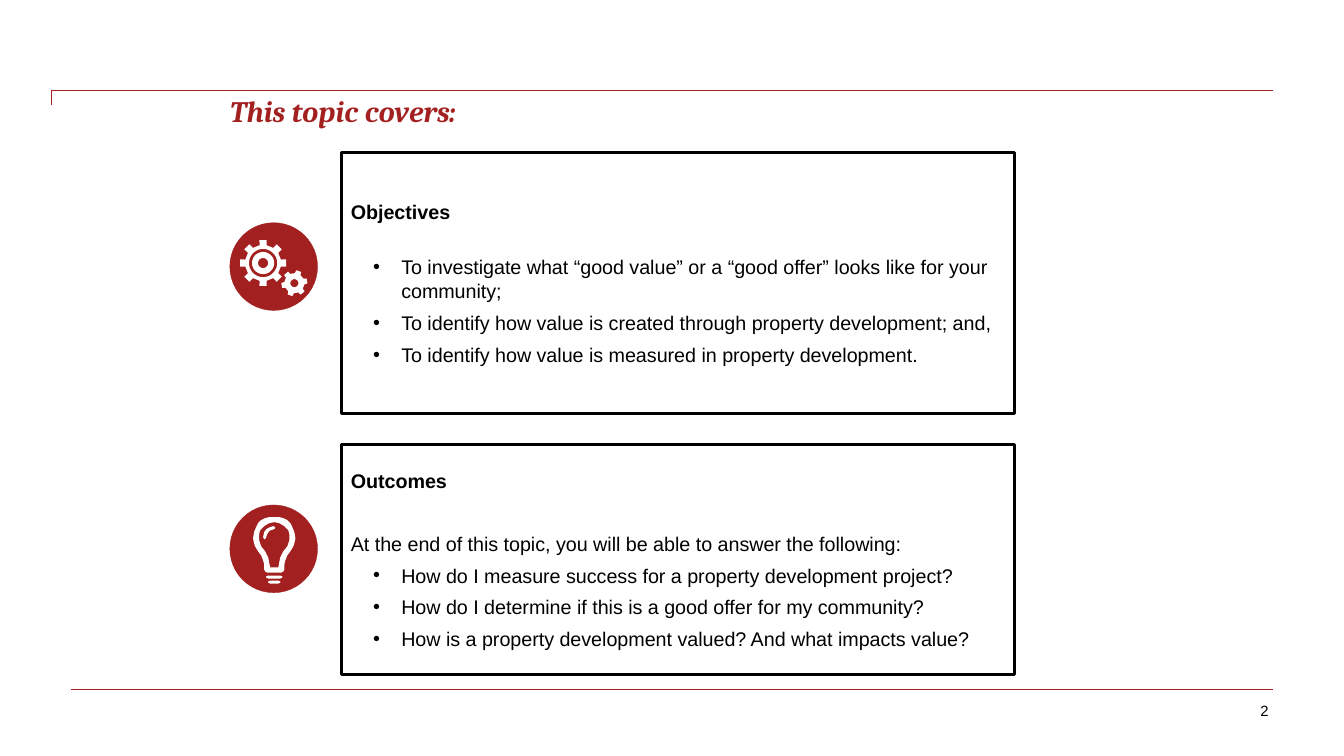
from dataclasses import dataclass
from math import cos, radians, sin

from lxml import etree
from pptx import Presentation
from pptx.dml.color import RGBColor
from pptx.enum.shapes import MSO_CONNECTOR, MSO_SHAPE
from pptx.enum.text import MSO_ANCHOR, MSO_AUTO_SIZE, PP_ALIGN
from pptx.oxml.ns import qn
from pptx.util import Inches, Pt

STRAIGHT, ELBOW = MSO_CONNECTOR.STRAIGHT, MSO_CONNECTOR.ELBOW
RECTANGLE, OVAL = MSO_SHAPE.RECTANGLE, MSO_SHAPE.OVAL
TOP, MIDDLE = MSO_ANCHOR.TOP, MSO_ANCHOR.MIDDLE
LEFT, RIGHT = PP_ALIGN.LEFT, PP_ALIGN.RIGHT
NO_AUTOFIT = MSO_AUTO_SIZE.NONE

Point = tuple[float, float]
Contour = list[Point]


@dataclass(frozen=True)
class Theme:
    red: RGBColor = RGBColor(0xA3, 0x20, 0x20)
    black: RGBColor = RGBColor(0, 0, 0)
    white: RGBColor = RGBColor(255, 255, 255)
    heading_font: str = "Cambria"
    body_font: str = "Arial"
    title_size: float = 21.2
    body_size: float = 14.1
    number_size: float = 10.6
    line_spacing: float = 1.03


@dataclass(frozen=True)
class Line:
    text: str
    bold: bool = False
    bullet: bool = False
    before: float = 5.3


@dataclass(frozen=True)
class Panel:
    top: float
    height: float
    lines: list[Line]


@dataclass(frozen=True)
class Icon:
    top: float
    drawings: list[list[Contour]]


THEME = Theme()
ICON_LEFT, ICON_SIZE = 2.28, 0.87
PANEL_LEFT, PANEL_WIDTH = 3.39, 6.67

PANELS = [
    Panel(1.51, 2.59, [
        Line("Objectives", bold=True, before=0),
        Line("To investigate what “good value” or a “good offer” looks like for your community;",
             bullet=True, before=22),
        Line("To identify how value is created through property development; and,", bullet=True),
        Line("To identify how value is measured in property development.", bullet=True),
    ]),
    Panel(4.41, 2.28, [
        Line("Outcomes", bold=True, before=0),
        Line("At the end of this topic, you will be able to answer the following:", before=27.3),
        Line("How do I measure success for a property development project?", bullet=True),
        Line("How do I determine if this is a good offer for my community?", bullet=True),
        Line("How is a property development valued? And what impacts value?", bullet=True),
    ]),
]


# Icon geometry, in inches on the slide
def polar(center: Point, radius: float, angle: float) -> Point:
    return (center[0] + radius * cos(radians(angle)),
            center[1] + radius * sin(radians(angle)))


def circle(center: Point, radius: float) -> Contour:
    return [polar(center, radius, angle) for angle in range(0, 360, 10)]


def gear(center: Point, teeth: int, outer: float, root: float,
         phase: float, tip: float, foot: float) -> Contour:
    profile = [(root, -foot), (outer, -tip), (outer, tip), (root, foot)]
    return [polar(center, radius, phase + 360 / teeth * tooth + offset)
            for tooth in range(teeth) for radius, offset in profile]


def mirrored(axis: float, half: Contour) -> Contour:
    """Close a right-hand profile of (offset, y) points with its reflection."""
    return ([(axis + dx, y) for dx, y in half]
            + [(axis - dx, y) for dx, y in reversed(half)])


def bulb_bar(half_width: float, top: float) -> Contour:
    return mirrored(BULB_AXIS, [(half_width - 0.02, top), (half_width, top + 0.01),
                                (half_width, top + 0.02), (half_width - 0.02, top + 0.03)])


BIG, SMALL, BULB_AXIS = (2.61, 2.61), (2.92, 2.81), 2.72
GLASS_OUTER = [(0, 5.13), (0.05, 5.13), (0.09, 5.14), (0.13, 5.16), (0.16, 5.19),
               (0.18, 5.23), (0.2, 5.28), (0.21, 5.34), (0.2, 5.39), (0.19, 5.42),
               (0.16, 5.47), (0.13, 5.51), (0.11, 5.56), (0.1, 5.6), (0.1, 5.65),
               (0.09, 5.67), (0.07, 5.68)]
GLASS_INNER = [(0, 5.18), (0.05, 5.19), (0.1, 5.22), (0.14, 5.26), (0.15, 5.3),
               (0.15, 5.36), (0.13, 5.42), (0.09, 5.47), (0.06, 5.53), (0.04, 5.63)]
GLINT = [(2.64, 5.33), (2.65, 5.3), (2.67, 5.27), (2.69, 5.26), (2.72, 5.25), (2.73, 5.24),
         (2.73, 5.23), (2.71, 5.22), (2.68, 5.23), (2.64, 5.25), (2.62, 5.28), (2.61, 5.33),
         (2.62, 5.35), (2.63, 5.35)]

ICONS = [
    Icon(2.21, [
        [gear(BIG, 8, 0.23, 0.18, 0, 9, 11)] + [circle(BIG, r) for r in (0.14, 0.11, 0.05)],
        [gear(SMALL, 6, 0.13, 0.1, -10, 11, 17), circle(SMALL, 0.04)],
    ]),
    Icon(5.01, [
        [mirrored(BULB_AXIS, GLASS_OUTER), mirrored(BULB_AXIS, GLASS_INNER)],
        [GLINT], [bulb_bar(0.08, 5.71)], [bulb_bar(0.06, 5.76)],
    ]),
]


# Drawing helpers
def set_all(target, values: dict) -> None:
    for name, value in values.items():
        setattr(target, name, value)


def format_run(r, size: float, color: RGBColor, font: str, **styles: bool) -> None:
    set_all(r.font, {"size": Pt(size), "name": font, **styles})
    r.font.color.rgb = color


def paint(sp, fill: RGBColor, line: RGBColor | None = None, width: float = 0) -> None:
    sp.shadow.inherit = False
    sp.fill.solid()
    sp.fill.fore_color.rgb = fill
    if line is None:
        sp.line.fill.background()
    else:
        sp.line.color.rgb = line
        sp.line.width = Pt(width)


def add_rule(shapes, kind, start: Point, end: Point):
    cxn = shapes.add_connector(kind, *map(Inches, start + end))
    cxn.line.color.rgb = THEME.red
    cxn.line.width = Pt(0.75)
    etree.SubElement(cxn._element.spPr, qn("a:effectLst"))
    return cxn


def add_icon(shapes, icon: Icon) -> None:
    group = shapes.add_group_shape().shapes
    disc = group.add_shape(OVAL, Inches(ICON_LEFT), Inches(icon.top),
                           Inches(ICON_SIZE), Inches(ICON_SIZE))
    paint(disc, THEME.red, THEME.red, 0.25)
    for contours in icon.drawings:
        first, *holes = [[(Inches(x), Inches(y)) for x, y in c] for c in contours]
        builder = group.build_freeform(*first[0])
        builder.add_line_segments(first[1:])
        for hole in holes:
            builder.move_to(*hole[0])
            builder.add_line_segments(hole[1:])
        paint(builder.convert_to_shape(), THEME.white)


def add_panel(shapes, panel: Panel) -> None:
    sp = shapes.add_shape(RECTANGLE, Inches(PANEL_LEFT), Inches(panel.top),
                          Inches(PANEL_WIDTH), Inches(panel.height))
    paint(sp, THEME.white, THEME.black, 2)
    tf = sp.text_frame
    set_all(tf, {"word_wrap": True, "vertical_anchor": MIDDLE,
                 "margin_left": Inches(0.09), "margin_right": Inches(0.09),
                 "margin_top": Inches(0.04), "margin_bottom": Inches(0.04)})
    for i, line in enumerate(panel.lines):
        p = tf.add_paragraph() if i else tf.paragraphs[0]
        set_all(p, {"alignment": LEFT, "space_before": Pt(line.before),
                    "line_spacing": THEME.line_spacing, "level": int(line.bullet)})
        if line.bullet:
            pPr = p._p.get_or_add_pPr()
            pPr.set("marL", str(Inches(0.5)))
            pPr.set("indent", str(Inches(-0.28)))
            etree.SubElement(pPr, qn("a:buFont"), typeface=THEME.body_font)
            etree.SubElement(pPr, qn("a:buChar"), char="•")
        r = p.add_run()
        r.text = line.text
        format_run(r, THEME.body_size, THEME.black, THEME.body_font, bold=line.bold)


def main() -> None:
    prs = Presentation()
    set_all(prs, {"slide_width": Inches(13.33), "slide_height": Inches(7.5)})
    slide = prs.slides.add_slide(prs.slide_layouts[5])
    shapes = slide.shapes

    # Frame rules: the top one turns down at its left end
    top_rule = add_rule(shapes, ELBOW, (0.51, 1.04), (12.63, 0.9))
    guides = top_rule._element.spPr.find(qn("a:prstGeom")).get_or_add_avLst()
    etree.SubElement(guides, qn("a:gd"), name="adj1", fmla="val 0")
    add_rule(shapes, STRAIGHT, (0.7, 6.84), (12.63, 6.84))

    # Title
    title = shapes.title
    set_all(title, {"left": Inches(2.28), "top": Inches(0.92),
                    "width": Inches(8.57), "height": Inches(0.97)})
    tf = title.text_frame
    set_all(tf, {"vertical_anchor": TOP, "auto_size": NO_AUTOFIT, "margin_left": 0,
                 "margin_right": 0, "margin_top": 0, "margin_bottom": 0})
    p = tf.paragraphs[0]
    p.alignment = LEFT
    r = p.add_run()
    r.text = "This topic covers:"
    format_run(r, THEME.title_size, THEME.red, THEME.heading_font, bold=True, italic=True)

    # Panels and their icons
    for panel, icon in zip(PANELS, ICONS):
        add_panel(shapes, panel)
        add_icon(shapes, icon)

    # Page number
    tf = shapes.add_textbox(Inches(9.04), Inches(6.87), Inches(3.64), Inches(0.35)).text_frame
    set_all(tf, {"word_wrap": True, "vertical_anchor": MIDDLE})
    p = tf.paragraphs[0]
    p.alignment = RIGHT
    r = p.add_run()
    r.text = "2"
    format_run(r, THEME.number_size, THEME.black, THEME.body_font)

    prs.save("out.pptx")


if __name__ == "__main__":
    main()
